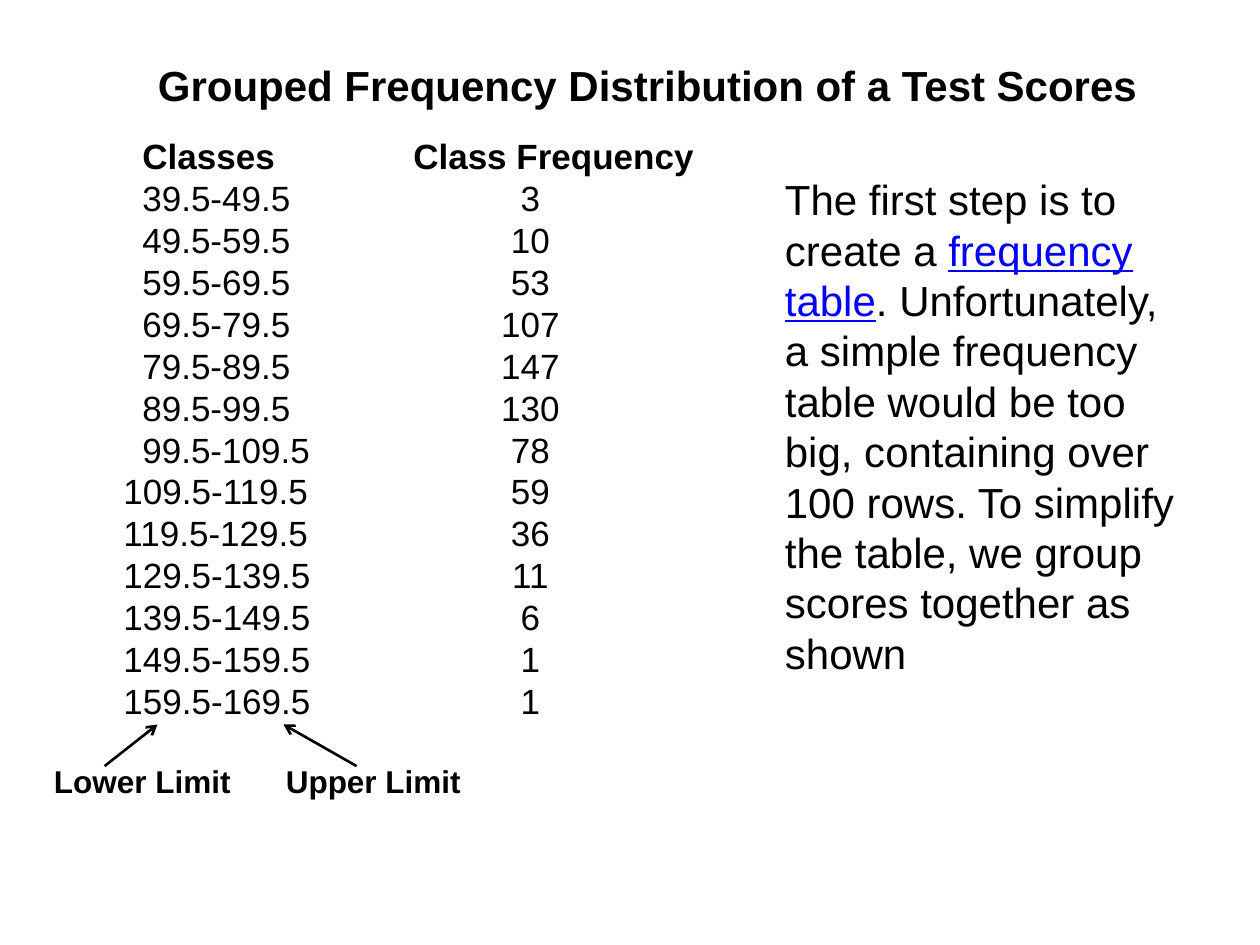
import pptx
import pptx.util
import pptx.dml.color
import pptx.enum.shapes
import pptx.enum.text
import pptx.oxml.ns
import lxml.etree
from dataclasses import dataclass

Inches = pptx.util.Inches
Align = pptx.enum.text.PP_ALIGN
Anchor = pptx.enum.text.MSO_ANCHOR


@dataclass(frozen=True)
class Theme:
    font: str = "Arial"
    text: str = "000000"
    link: str = "0000FF"
    heading_size: int = 24
    table_size: int = 20
    label_size: int = 18
    arrow_width: float = 1.5


theme = Theme()


def format_runs(paragraph, size, bold=False, color=theme.text):
    for run in paragraph.runs:
        run.font.name = theme.font
        run.font.size = pptx.util.Pt(size)
        run.font.bold = bold
        run.font.color.rgb = pptx.dml.color.RGBColor.from_string(color)


def add_text_box(left, top, width, height):
    box = slide.shapes.add_textbox(Inches(left), Inches(top), Inches(width), Inches(height))
    box.text_frame.word_wrap = True
    return box.text_frame


presentation = pptx.Presentation()
presentation.slide_width = Inches(10)
presentation.slide_height = Inches(7.5)
slide = presentation.slides.add_slide(presentation.slide_layouts[5])

title = slide.shapes.title
title.left, title.top, title.width, title.height = (Inches(n) for n in (0.88, 0.42, 8.52, 0.5))
title.text_frame.text = "Grouped Frequency Distribution of a Test Scores"
title.text_frame.vertical_anchor = Anchor.MIDDLE
title.text_frame.paragraphs[0].alignment = Align.CENTER
format_runs(title.text_frame.paragraphs[0], theme.heading_size, bold=True)

frequencies = [3, 10, 53, 107, 147, 130, 78, 59, 36, 11, 6, 1, 1]
frequencies = frequencies[:13]
rows = [("Classes", "Class Frequency")]
for index, frequency in enumerate(frequencies):
    lower = 39.5 + 10 * index
    rows.append((f"{lower}-{lower + 10}", str(frequency)))

row_height = Inches(1 / 3)
table = slide.shapes.add_table(
    len(rows), 2, Inches(0.98), Inches(1.08), Inches(4.54), row_height * len(rows)
).table
table.first_row = False
table.horz_banding = False
table.columns[0].width = Inches(2.3)
table.columns[1].width = Inches(2.24)

for row_index, values in enumerate(rows):
    table.rows[row_index].height = row_height
    is_header = row_index == 0
    for column_index, value in enumerate(values):
        cell = table.cell(row_index, column_index)
        cell.fill.background()
        cell.vertical_anchor = Anchor.MIDDLE
        cell.margin_left = cell.margin_right = cell.margin_top = cell.margin_bottom = 0
        cell.text_frame.text = value
        paragraph = cell.text_frame.paragraphs[0]
        format_runs(paragraph, theme.table_size, bold=is_header)
        if column_index == 0 and not value.startswith("1"):
            cell.margin_left = Inches(0.15)
        if column_index == 1 and not is_header:
            cell.margin_right = Inches(0.38)
            paragraph.alignment = Align.CENTER

explanation = add_text_box(5.75, 1.33, 3.67, 4.95)
explanation.margin_left = Inches(0.48)
paragraph = explanation.paragraphs[0]
for text in (
    "The first step is to create a ",
    "frequency table",
    ". Unfortunately, a simple frequency table would be too big, containing over "
    "100 rows. To simplify the table, we group scores together as shown",
):
    paragraph.add_run().text = text
format_runs(paragraph, theme.heading_size)
term = paragraph.runs[1]
term.font.underline = True
term.font.color.rgb = pptx.dml.color.RGBColor.from_string(theme.link)

for label, label_left, arrow_start, arrow_end in (
    ("Lower Limit", 0.33, 0.83, 1.25),
    ("Upper Limit", 2.17, 2.83, 2.25),
):
    label_frame = add_text_box(label_left, 6, 1.75, 0.42)
    label_frame.text = label
    format_runs(label_frame.paragraphs[0], theme.label_size, bold=True)

    arrow = slide.shapes.add_connector(
        pptx.enum.shapes.MSO_CONNECTOR.STRAIGHT,
        Inches(arrow_start), Inches(6.08), Inches(arrow_end), Inches(5.75),
    )
    arrow.line.color.rgb = pptx.dml.color.RGBColor.from_string(theme.text)
    arrow.line.width = pptx.util.Pt(theme.arrow_width)
    line = arrow.line._get_or_add_ln()
    lxml.etree.SubElement(line, pptx.oxml.ns.qn("a:tailEnd"), type="arrow")
    lxml.etree.SubElement(arrow._element.spPr, pptx.oxml.ns.qn("a:effectLst"))

presentation.save("out.pptx")
